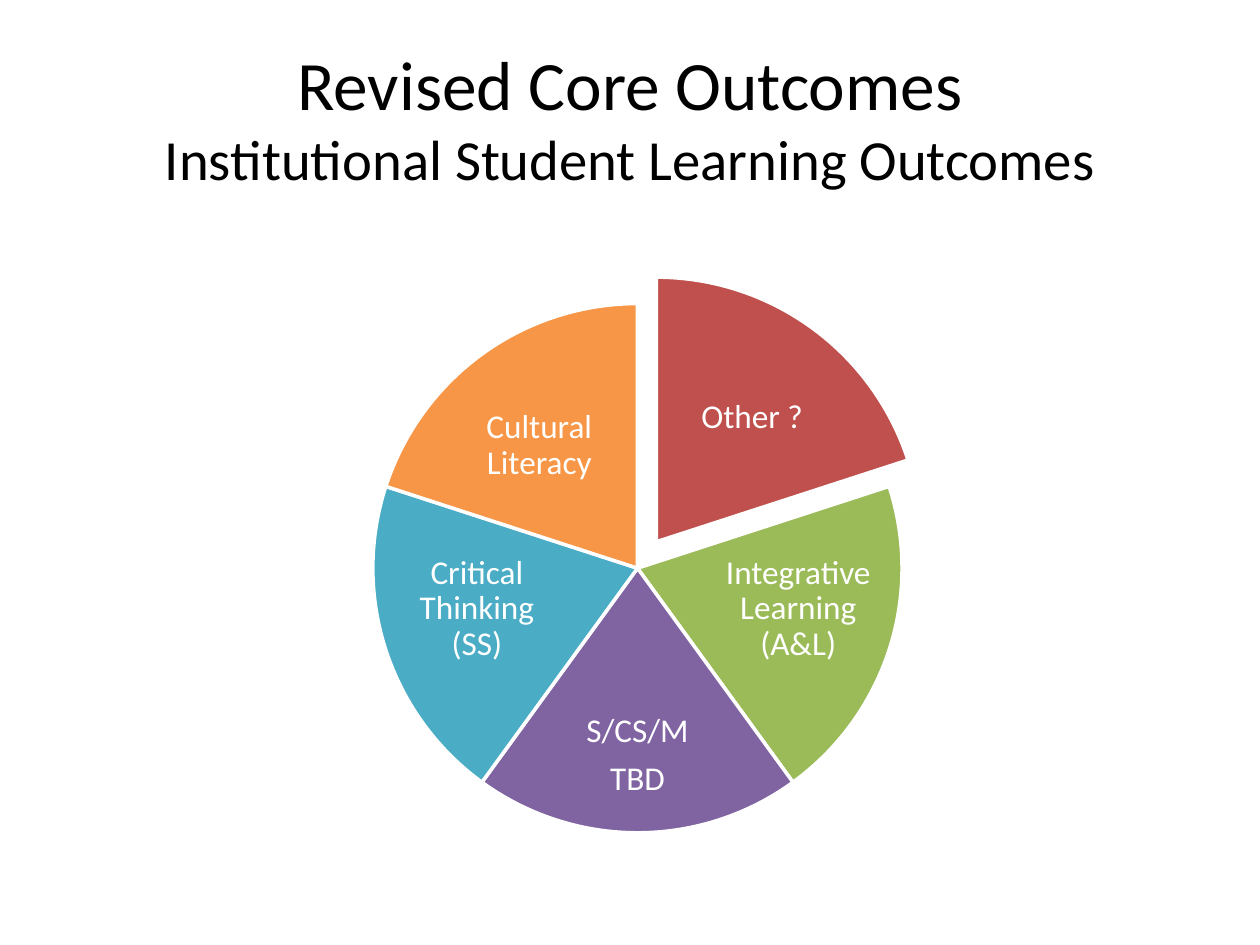
from dataclasses import dataclass

from pptx import Presentation
from pptx.dml.color import RGBColor
from pptx.enum import shapes, text
from pptx.util import Inches, Pt

COLORS = {
    "black": "000000",
    "white": "FFFFFF",
    "red": "C0504D",
    "green": "9BBB59",
    "purple": "8064A2",
    "teal": "4BACC6",
    "orange": "F79646",
}
FONT = "Calibri"
PIE_LEFT, PIE_TOP, PIE_SIZE = 2.96, 2.41, 4.2
SWEEP = 72  # degrees per slice
ADJ_PER_DEGREE = 0.6  # 60000 units per degree, normalised by 100000


@dataclass
class Slice:
    lines: tuple[str, ...]
    color: str
    label_box: tuple[float, float, float, float]
    offset: tuple[float, float] = (0, 0)


SLICES = [
    Slice(("Other ?",), "red", (5.26, 2.83, 1.42, 0.97), (0.15, -0.21)),
    Slice(("Integrative Learning (A&L)",), "green", (5.71, 4.31, 1.25, 1.05)),
    Slice(("S/CS/M", "TBD"), "purple", (4.31, 5.55, 1.5, 0.9)),
    Slice(("Critical Thinking (SS)",), "teal", (3.16, 4.31, 1.25, 1.05)),
    Slice(("Cultural Literacy",), "orange", (3.57, 3.05, 1.42, 0.97)),
]


def rgb(name: str) -> RGBColor:
    return RGBColor.from_string(COLORS[name])


def apply(target, formats: dict) -> None:
    for name, value in formats.items():
        setattr(target, name, value)


def add_run(p, content: str, size: float, color: str) -> None:
    r = p.add_run()
    r.text = content
    apply(r.font, {"name": FONT, "size": Pt(size)})
    r.font.color.rgb = rgb(color)


def add_wedge(group, item: Slice, index: int) -> None:
    dx, dy = item.offset
    sp = group.shapes.add_shape(
        shapes.MSO_SHAPE.PIE, Inches(PIE_LEFT + dx), Inches(PIE_TOP + dy),
        Inches(PIE_SIZE), Inches(PIE_SIZE))
    start = 270 + index * SWEEP
    for i, angle in enumerate((start, start + SWEEP)):
        sp.adjustments[i] = angle % 360 * ADJ_PER_DEGREE
    sp.shadow.inherit = False
    sp.fill.solid()
    sp.fill.fore_color.rgb = rgb(item.color)
    sp.line.color.rgb = rgb("white")
    sp.line.width = Pt(2)


def add_label(group, item: Slice) -> None:
    tf = group.shapes.add_textbox(*map(Inches, item.label_box)).text_frame
    margins = ("margin_left", "margin_top", "margin_right", "margin_bottom")
    apply(tf, dict.fromkeys(margins, Inches(0.03)))
    apply(tf, {"word_wrap": True, "vertical_anchor": text.MSO_ANCHOR.MIDDLE})
    for i, line in enumerate(item.lines):
        p = tf.add_paragraph() if i else tf.paragraphs[0]
        apply(p, {"alignment": text.PP_ALIGN.CENTER, "line_spacing": 0.9,
                  "space_after": Pt(6.65)})
        add_run(p, line, 19, "white")


def main() -> None:
    prs = Presentation()
    prs.slide_width, prs.slide_height = Inches(10), Inches(7.5)
    s = prs.slides.add_slide(prs.slide_layouts[5])

    # Title
    title = s.shapes.title
    apply(title, {"left": Inches(0.5), "top": Inches(0.3),
                  "width": Inches(9), "height": Inches(1.25)})
    tf = title.text_frame
    apply(tf, {"auto_size": text.MSO_AUTO_SIZE.NONE, "word_wrap": True,
               "vertical_anchor": text.MSO_ANCHOR.MIDDLE})
    p = tf.paragraphs[0]
    p.alignment = text.PP_ALIGN.CENTER
    add_run(p, "Revised Core Outcomes", 39.6, "black")
    p.add_line_break()
    add_run(p, "Institutional Student Learning Outcomes", 32.4, "black")

    # Pie of outcomes, first slice pulled out
    group = s.shapes.add_group_shape()
    for index, item in enumerate(SLICES):
        add_wedge(group, item, index)
        add_label(group, item)

    prs.save("out.pptx")


if __name__ == "__main__":
    main()
